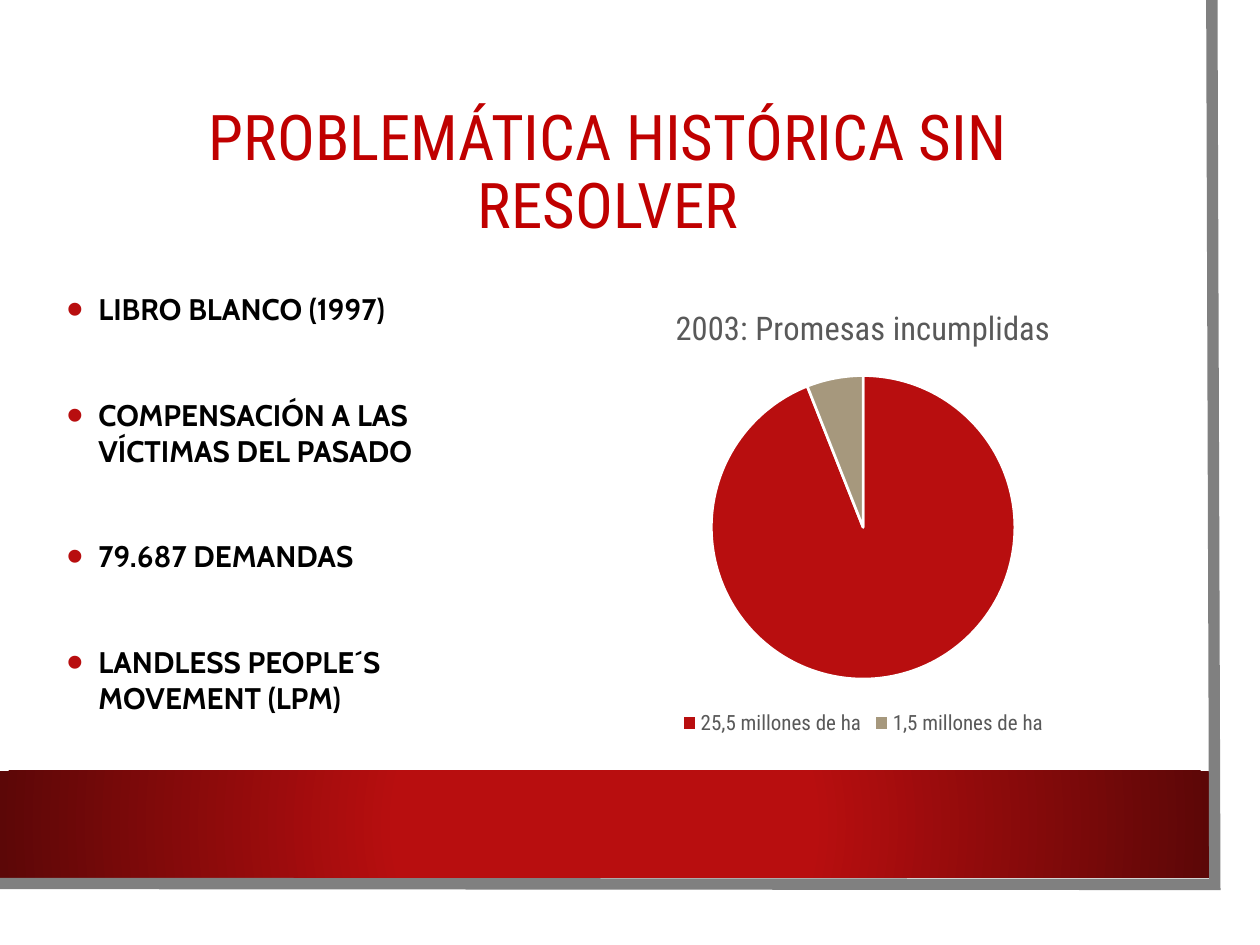
"""Build a slide with a bullet list and a pie chart of unkept land promises."""
from lxml.etree import SubElement
from pptx import Presentation
from pptx.chart.data import CategoryChartData
from pptx.dml.color import RGBColor
from pptx.enum.chart import XL_CHART_TYPE, XL_LEGEND_POSITION
from pptx.enum.shapes import MSO_SHAPE
from pptx.enum.text import MSO_ANCHOR, MSO_AUTO_SIZE, PP_ALIGN
from pptx.oxml import parse_xml
from pptx.oxml.ns import nsdecls, qn
from pptx.util import Cm, Pt

TITLE = "PROBLEMÁTICA HISTÓRICA SIN RESOLVER"
BULLETS = [
    "LIBRO BLANCO (1997)",
    "COMPENSACIÓN A LAS VÍCTIMAS DEL PASADO",
    "79.687 DEMANDAS",
    "LANDLESS PEOPLE´S MOVEMENT (LPM)",
]
CHART_TITLE = "2003: Promesas incumplidas"
SHARES = {"25,5 millones de ha": 94, "1,5 millones de ha": 6}

RED = RGBColor(0xB8, 0x0E, 0x0F)
DARK_RED = RGBColor(0x5C, 0x07, 0x07)
TITLE_RED = RGBColor(0xC0, 0x00, 0x00)
SAND = RGBColor(0xA6, 0x98, 0x7D)
EDGE_GRAY = RGBColor(0x80, 0x80, 0x80)
TEXT_GRAY = RGBColor(0x59, 0x59, 0x59)
BLACK = RGBColor(0, 0, 0)
WHITE = RGBColor(0xFF, 0xFF, 0xFF)
HEADING_FONT = "Roboto Condensed"
BODY_FONT = "Cabin"

PANEL_BOX = (0, 0, 24.97, 18.47)
BAND_BOX = (0, 15.54, 24.38, 2.16)
EDGE_POINTS = [(24.43, 0), (24.49, 17.83), (-0.05, 17.81)]
TITLE_BOX = (1.42, 1.9, 21.67, 3.23)
BODY_BOX = (1.09, 5.74, 9.8, 9.19)
CHART_BOX = (12.5, 5.74, 9.8, 9.19)


def lengths(box):
    return [Cm(value) for value in box]


def set_font(font, name, size, color, bold=False):
    font.name, font.size, font.bold = name, Pt(size), bold
    font.color.rgb = color


def add_rectangle(slide, box):
    shape = slide.shapes.add_shape(MSO_SHAPE.RECTANGLE, *lengths(box))
    shape.shadow.inherit = False
    shape.line.fill.background()
    shape.fill.solid()
    shape.fill.fore_color.rgb = WHITE
    return shape


def add_background(slide):
    add_rectangle(slide, PANEL_BOX)
    band = add_rectangle(slide, BAND_BOX)
    solid = band._element.spPr.find(qn("a:solidFill"))
    stops = "".join(
        f'<a:gs pos="{position}"><a:srgbClr val="{color}"/></a:gs>'
        for position, color in [(34000, RED), (100000, DARK_RED)]
    )
    gradient = parse_xml(
        f'<a:gradFill {nsdecls("a")} rotWithShape="1"><a:gsLst>{stops}</a:gsLst>'
        '<a:path path="circle"><a:fillToRect l="50000" t="50000" r="50000" b="50000"/>'
        "</a:path></a:gradFill>"
    )
    solid.getparent().replace(solid, gradient)

    start, *others = [lengths(point) for point in EDGE_POINTS]
    builder = slide.shapes.build_freeform(*start)
    builder.add_line_segments(others, close=False)
    edge = builder.convert_to_shape()
    edge.shadow.inherit = False
    edge.fill.background()
    edge.line.color.rgb = EDGE_GRAY
    edge.line.width = Pt(6.5)
    SubElement(edge.line._get_or_add_ln(), qn("a:miter"), lim="800000")


def place_text(slide, shape, box, anchor):
    slide.shapes._spTree.append(shape._element)
    shape.left, shape.top, shape.width, shape.height = lengths(box)
    frame = shape.text_frame
    frame.word_wrap = True
    frame.auto_size = MSO_AUTO_SIZE.NONE
    frame.vertical_anchor = anchor
    return frame


def add_bullet(paragraph):
    properties = paragraph._p.get_or_add_pPr()
    properties.set("marL", str(Cm(0.64)))
    properties.set("indent", str(Cm(-0.64)))
    color = SubElement(properties, qn("a:buClr"))
    SubElement(color, qn("a:srgbClr"), val=str(RED))
    SubElement(properties, qn("a:buSzPct"), val="160000")
    SubElement(properties, qn("a:buFont"), typeface="Arial")
    SubElement(properties, qn("a:buChar"), char="•")


def fill_title(slide):
    frame = place_text(slide, slide.shapes.title, TITLE_BOX, MSO_ANCHOR.MIDDLE)
    paragraph = frame.paragraphs[0]
    paragraph.alignment = PP_ALIGN.CENTER
    paragraph.line_spacing = 0.9
    run = paragraph.add_run()
    run.text = TITLE
    set_font(run.font, HEADING_FONT, 36, TITLE_RED)


def fill_body(slide):
    frame = place_text(slide, slide.placeholders[1], BODY_BOX, MSO_ANCHOR.TOP)
    for index, text in enumerate(BULLETS):
        paragraph = frame.add_paragraph() if index else frame.paragraphs[0]
        add_bullet(paragraph)
        paragraph.space_before = Pt(40 if index else 0)
        run = paragraph.add_run()
        run.text = text
        set_font(run.font, BODY_FONT, 17, BLACK, bold=True)


def add_pie(slide):
    data = CategoryChartData()
    data.categories = list(SHARES)
    data.add_series(CHART_TITLE, list(SHARES.values()))
    chart = slide.shapes.add_chart(XL_CHART_TYPE.PIE, *lengths(CHART_BOX), data).chart
    set_font(chart.font, HEADING_FONT, 10, BLACK)

    chart.has_title = True
    run = chart.chart_title.text_frame.paragraphs[0].add_run()
    run.text = CHART_TITLE
    set_font(run.font, HEADING_FONT, 18.6, TEXT_GRAY)
    chart.chart_title.include_in_layout = False

    chart.has_legend = True
    chart.legend.position = XL_LEGEND_POSITION.BOTTOM
    chart.legend.include_in_layout = False
    set_font(chart.legend.font, HEADING_FONT, 12, TEXT_GRAY)

    plot = chart.plots[0]
    plot.vary_by_categories = True
    for index, color in enumerate([RED, SAND]):
        slice_format = plot.series[0].points[index].format
        slice_format.fill.solid()
        slice_format.fill.fore_color.rgb = color
        slice_format.line.color.rgb = WHITE
        slice_format.line.width = Pt(1.5)


def main():
    presentation = Presentation()
    presentation.slide_width, presentation.slide_height = Cm(25.4), Cm(19.05)
    slide = presentation.slides.add_slide(presentation.slide_layouts[1])
    add_background(slide)
    fill_title(slide)
    add_pie(slide)
    fill_body(slide)
    presentation.save("out.pptx")


if __name__ == "__main__":
    main()
